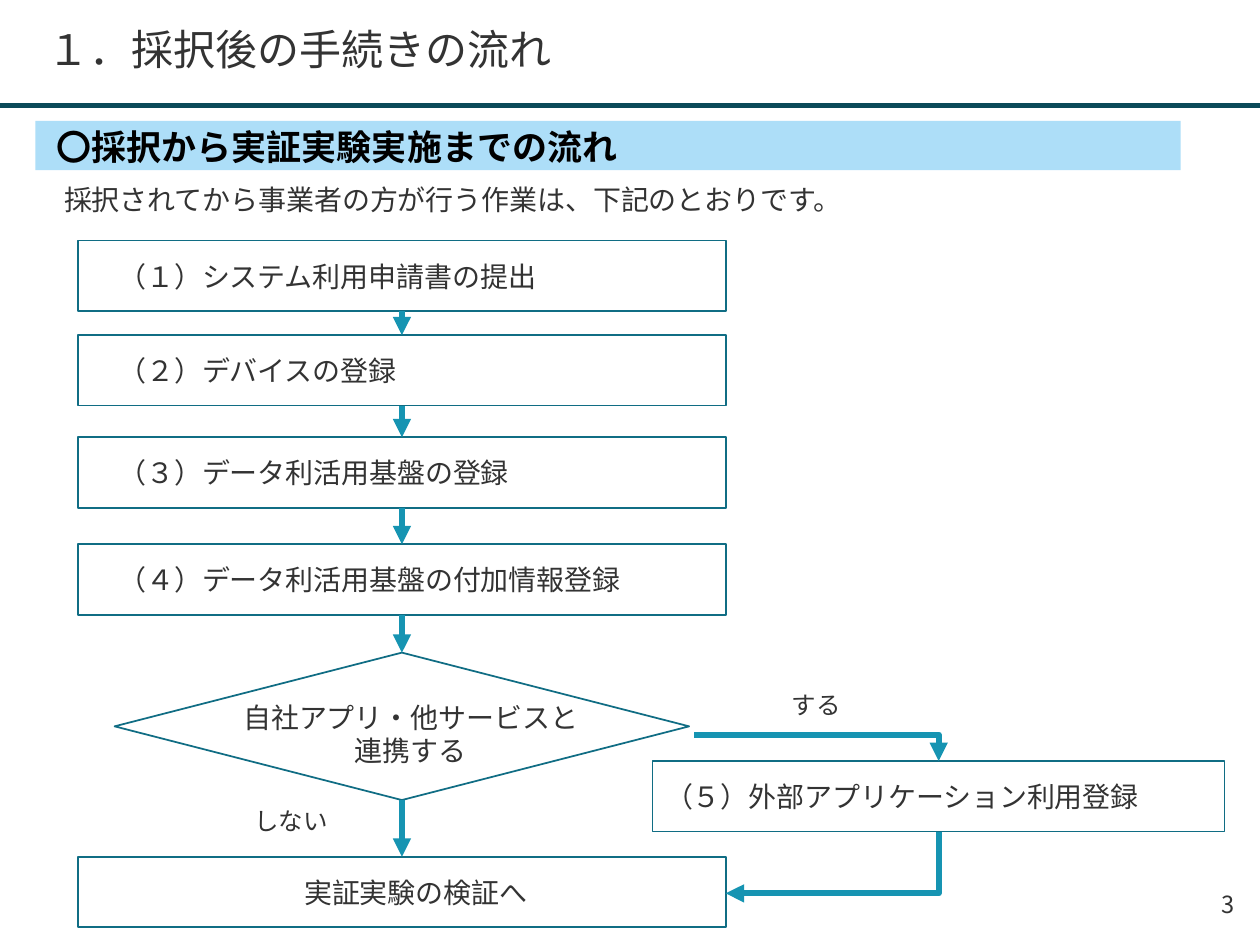
"""Build the slide showing the procedure from adoption to the field trial."""
from pptx import Presentation
from pptx import util as u
from pptx.dml.color import RGBColor
from pptx.enum import shapes, text
from pptx.oxml import ns, xmlchemy

COLORS = {"text": "333333", "black": "000000", "rule": "0B4A59", "band": "ADDEF8",
          "outline": "106D84", "arrow": "1694B2"}
FONT = "Noto Sans CJK JP"
LEFT, CENTER = text.PP_ALIGN.LEFT, text.PP_ALIGN.CENTER


def write(sp, lines, size=16, color="text", align=LEFT, bold=False, anchor=text.MSO_ANCHOR.TOP):
    tf = sp.text_frame
    tf.word_wrap = True
    tf.vertical_anchor = anchor
    tf.text = lines
    for p in tf.paragraphs:
        p.alignment = align
        p.font.name, p.font.size, p.font.bold = FONT, u.Pt(size), bold
        p.font.color.rgb = RGBColor.from_string(COLORS[color])
        ea = xmlchemy.OxmlElement("a:ea")
        ea.set("typeface", FONT)
        p._p.pPr.find(ns.qn("a:defRPr")).find(ns.qn("a:latin")).addnext(ea)


def connect(x1, y1, x2, y2, color="arrow", width=3.5, head=True, bent=False, turn=0):
    kind = shapes.MSO_CONNECTOR.ELBOW if bent else shapes.MSO_CONNECTOR.STRAIGHT
    sp = s.shapes.add_connector(kind, *map(u.Inches, (x1, y1, x2, y2)))
    sp.line.color.rgb = RGBColor.from_string(COLORS[color])
    sp.line.width = u.Pt(width)
    spPr = sp._element.spPr
    if head:
        tail = xmlchemy.OxmlElement("a:tailEnd")
        tail.set("type", "triangle")
        sp.line._get_or_add_ln().append(tail)
    if bent:
        spPr.find(ns.qn("a:prstGeom")).set("prst", "bentConnector2")
        spPr.find(ns.qn("a:xfrm")).set("rot", str(turn * 60000))
    spPr.append(xmlchemy.OxmlElement("a:effectLst"))


prs = Presentation()
prs.slide_width, prs.slide_height = u.Inches(10), u.Inches(7.5)
s = prs.slides.add_slide(prs.slide_layouts[5])

connect(0, 0.84, 10, 0.84, "rule", 3, head=False)

title = s.shapes.title
title.left, title.top, title.width, title.height = map(u.Inches, (0.28, 0.03, 9.29, 0.76))
write(title, "１．採択後の手続きの流れ", 24, anchor=text.MSO_ANCHOR.MIDDLE)
title.text_frame.paragraphs[0].line_spacing = 0.9

band = s.shapes.add_shape(shapes.MSO_SHAPE.RECTANGLE, *map(u.Inches, (0.28, 0.96, 9.09, 0.39)))
band.shadow.inherit = False
band.fill.solid()
band.fill.fore_color.rgb = RGBColor.from_string(COLORS["band"])
band.line.fill.background()

BOX_X, BOX_W, BOX_H = 0.62, 5.14, 0.56
MID_X = BOX_X + BOX_W / 2
steps = [
    (1.91, "　（１）システム利用申請書の提出"),
    (2.66, "　（２）デバイスの登録"),
    (3.47, "　（３）データ利活用基盤の登録"),
    (4.32, "　（４）データ利活用基盤の付加情報登録"),
    (6.8, "　実証実験の検証へ"),
]
rect, diamond = shapes.MSO_SHAPE.RECTANGLE, shapes.MSO_SHAPE.FLOWCHART_DECISION
boxes = [(rect, BOX_X, top, BOX_W, BOX_H, label) for top, label in steps]
boxes.insert(4, (diamond, 0.91, 5.18, 4.56, 1.17, ""))
side = (rect, 5.18, 6.04, 4.54, BOX_H, "（５）外部アプリケーション利用登録")

for kind, x, y, w, h, label in boxes + [side]:
    sp = s.shapes.add_shape(kind, *map(u.Inches, (x, y, w, h)))
    sp.shadow.inherit = False
    sp.fill.background()
    sp.line.color.rgb = RGBColor.from_string(COLORS["outline"])
    sp.line.width = u.Pt(1)
    if label:
        align = CENTER if label == steps[-1][1] else LEFT
        write(sp, label, align=align, anchor=text.MSO_ANCHOR.MIDDLE)

for upper, lower in zip(boxes, boxes[1:]):
    connect(MID_X, upper[2] + upper[4], MID_X, lower[2])
connect(5.51, 5.83, 7.45, 6.04, bent=True)
connect(6.36, 6, 6.85, 7.69, bent=True, turn=90)

for x, y, w, h, label, size, color, align, bold in [
    (0.35, 0.95, 7.18, 0.44, "〇採択から実証実験実施までの流れ", 20, "black", LEFT, True),
    (0.41, 1.4, 9.31, 0.37, "採択されてから事業者の方が行う作業は、下記のとおりです。", 16, "text", LEFT, False),
    (1.02, 5.51, 4.48, 0.64, "自社アプリ・他サービスと\n連携する", 16, "text", CENTER, False),
    (5.88, 5.43, 1.2, 0.34, "する", 14, "text", CENTER, False),
    (1.71, 6.35, 1.2, 0.34, "しない", 14, "text", CENTER, False),
    (9.6, 7.01, 0.4, 0.4, "3", 13.5, "text", LEFT, False),
]:
    sp = s.shapes.add_textbox(*map(u.Inches, (x, y, w, h)))
    write(sp, label, size, color, align, bold)

prs.save("out.pptx")
